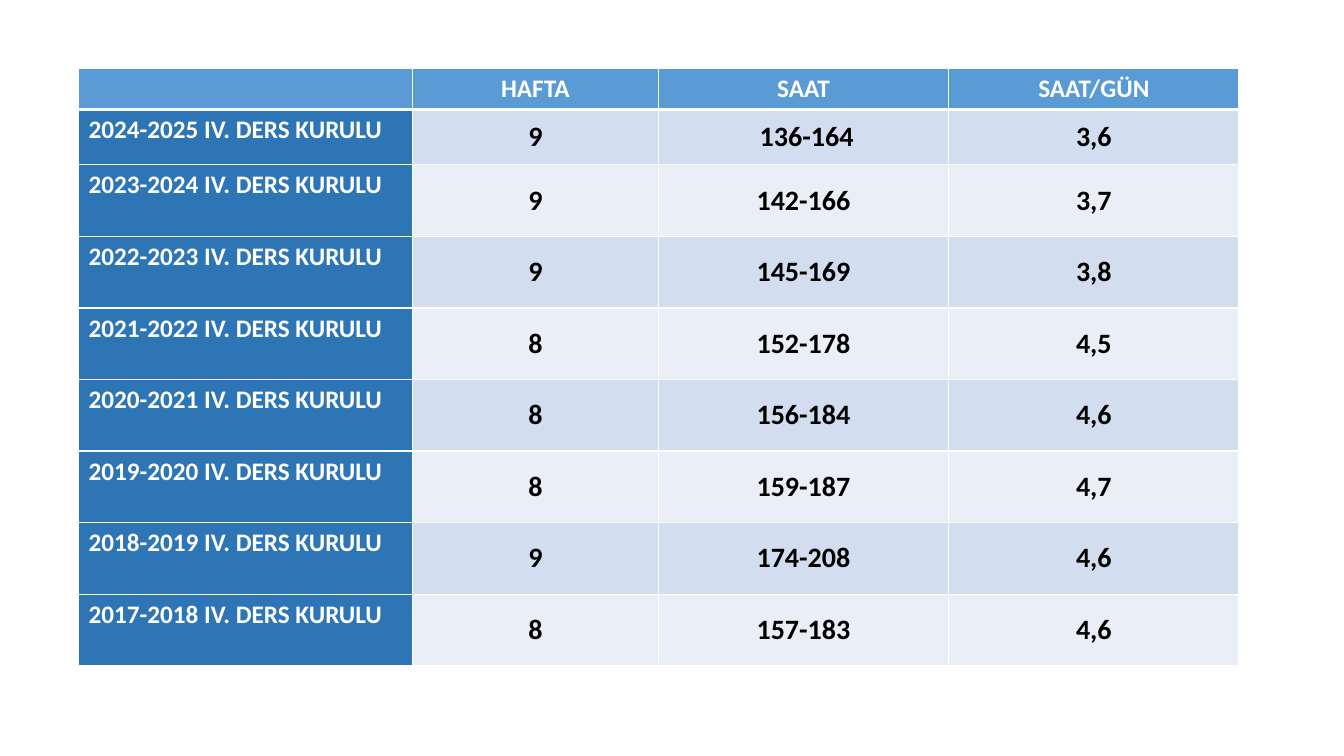
import pptx
import pptx.util
import pptx.dml.color
import pptx.enum.text
import lxml.etree

Inches = pptx.util.Inches
Pt = pptx.util.Pt
RGB = pptx.dml.color.RGBColor.from_string
Align = pptx.enum.text.PP_ALIGN
Anchor = pptx.enum.text.MSO_ANCHOR

hues = {
    "head": "5B9BD5",
    "label": "2E75B6",
    "odd": "D2DEEF",
    "even": "EAEFF7",
    "white": "FFFFFF",
    "black": "000000",
}
heads = ["", "HAFTA", "SAAT", "SAAT/GÜN"]
terms = [
    ("2024-2025", "9", " 136-164", "3,6"),
    ("2023-2024", "9", "142-166", "3,7"),
    ("2022-2023", "9", "145-169", "3,8"),
    ("2021-2022", "8", "152-178", "4,5"),
    ("2020-2021", "8", "156-184", "4,6"),
    ("2019-2020", "8", "159-187", "4,7"),
    ("2018-2019", "9", "174-208", "4,6"),
    ("2017-2018", "8", "157-183", "4,6"),
]
rows = [heads] + [[f"{year} IV. DERS KURULU", *rest] for year, *rest in terms]
widths = [3.31, 2.44, 2.88, 2.88]
heights = [0.4, 0.55] + [0.71] * 7


def edge(cell, side, width):
    props = cell._tc.get_or_add_tcPr()
    name = pptx.oxml.ns.qn
    line = lxml.etree.SubElement(props, name("a:ln" + side), w=str(Pt(width)))
    fill = lxml.etree.SubElement(line, name("a:solidFill"))
    lxml.etree.SubElement(fill, name("a:srgbClr"), val=hues["white"])


deck = pptx.Presentation()
deck.slide_width = Inches(13.33)
deck.slide_height = Inches(7.5)
slide = deck.slides.add_slide(deck.slide_layouts[6])
table = slide.shapes.add_table(
    len(rows), len(widths), Inches(0.78), Inches(0.68),
    Inches(sum(widths)), Inches(sum(heights))).table
table.first_col = True

for col, width in zip(table.columns, widths):
    col.width = Inches(width)
for row, height in zip(table.rows, heights):
    row.height = Inches(height)

for r, row in enumerate(rows):
    for c, text in enumerate(row):
        cell = table.cell(r, c)
        body = r > 0 and c > 0
        for side in "LRTB":
            thick = (r, side) in [(0, "B"), (1, "T")]
            edge(cell, side, 3 if thick else 1)
        if r == 0:
            hue = "head"
        elif c == 0:
            hue = "label"
        else:
            hue = "odd" if r % 2 else "even"
        cell.fill.solid()
        cell.fill.fore_color.rgb = RGB(hues[hue])
        cell.vertical_anchor = Anchor.MIDDLE if body else Anchor.TOP
        para = cell.text_frame.paragraphs[0]
        para.alignment = Align.CENTER if c else Align.LEFT
        if text:
            run = para.add_run()
            run.text = text
            run.font.name = "Calibri"
            run.font.size = Pt(20 if body else 18)
            run.font.bold = True
            run.font.color.rgb = RGB(hues["black" if body else "white"])

deck.save("out.pptx")
